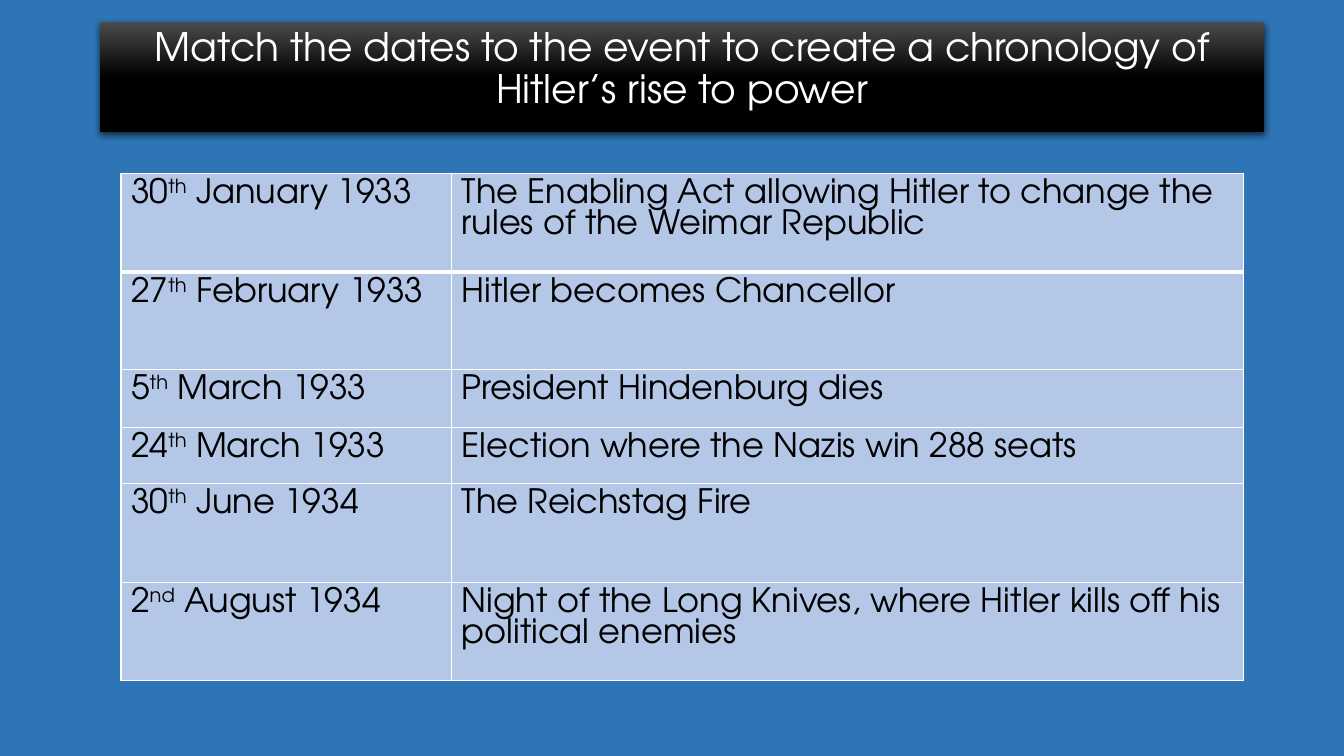
"""Build a slide for matching dates to events."""
from lxml import etree
from pptx import Presentation
from pptx.dml.color import RGBColor
from pptx.enum.text import MSO_ANCHOR, MSO_AUTO_SIZE, PP_ALIGN
from pptx.oxml.ns import qn
from pptx.util import Inches, Pt

TOP, NOFIT, CENTER = MSO_ANCHOR.TOP, MSO_AUTO_SIZE.NONE, PP_ALIGN.CENTER
FONT = "TeX Gyre Adventor"
BLUE, PALE, WHITE, BLACK, GREY = "2E75B6", "B4C7E7", "FFFFFF", "000000", "4B4B4B"

TITLE = "Match the dates to the event to create a chronology of Hitler’s rise to power"
ROWS = [
    (("30", "th", " January 1933"),
     "The Enabling Act allowing Hitler to change the rules of the Weimar Republic", 0.98),
    (("27", "th", " February 1933"), "Hitler becomes Chancellor", 0.97),
    (("5", "th", " March 1933"), "President Hindenburg dies", 0.57),
    (("24", "th", " March 1933"), "Election where the Nazis win 288 seats", 0.56),
    (("30", "th", " June 1934"), "The Reichstag Fire", 0.98),
    (("2", "nd", " August 1934"),
     "Night of the Long Knives, where Hitler kills off his political enemies", 0.97),
]
COLS = [3.28, 7.85]


def rgb(code):
    return RGBColor.from_string(code)


def node(parent, tag, **attrs):
    return etree.SubElement(parent, qn(tag), {k: str(v) for k, v in attrs.items()})


def style(para, size, color, space):
    para.font.name, para.font.size = FONT, Pt(size)
    para.font.color.rgb = rgb(color)
    para.line_spacing = space


def add_title(slide):
    bar = slide.shapes.title
    bar.left, bar.top, bar.width, bar.height = map(Inches, (0.99, 0.22, 11.55, 1.09))
    bar.fill.gradient()
    bar.fill.gradient_angle = 270
    for stop, (place, code) in zip(bar.fill.gradient_stops, [(0, GREY), (0.5, BLACK)]):
        stop.position, stop.color.rgb = place, rgb(code)
    bar.shadow.inherit = False
    glow = node(bar._element.spPr.find(qn("a:effectLst")), "a:outerShdw",
                blurRad=Pt(4.5), dist=Pt(1.5), dir=5400000, algn="ctr", rotWithShape=0)
    node(node(glow, "a:srgbClr", val=BLACK), "a:alpha", val=63000)
    frame = bar.text_frame
    frame.text = TITLE
    frame.word_wrap, frame.auto_size, frame.vertical_anchor = True, NOFIT, TOP
    para = frame.paragraphs[0]
    style(para, 28, WHITE, 0.9)
    para.alignment, para.space_before = CENTER, Pt(10)


def fill_cell(cell, parts, row):
    para = cell.text_frame.paragraphs[0]
    style(para, 24, BLACK, 1.0)
    for i, part in enumerate(parts):
        run = para.add_run()
        run.text = part
        if i == 1:
            run._r.get_or_add_rPr().set("baseline", "30000")
    props = cell._tc.get_or_add_tcPr()
    thick = {(0, "B"), (1, "T")}
    for side in "LRTB":
        line = node(props, "a:ln" + side, w=Pt(3 if (row, side) in thick else 1))
        node(node(line, "a:solidFill"), "a:srgbClr", val=WHITE)
    cell.fill.solid()
    cell.fill.fore_color.rgb = rgb(PALE)


def add_dates(slide):
    high = sum(row[2] for row in ROWS)
    table = slide.shapes.add_table(len(ROWS), len(COLS), Inches(1.2), Inches(1.72),
                                   Inches(sum(COLS)), Inches(high)).table
    table.first_row = table.horz_banding = False
    for col, width in zip(table.columns, COLS):
        col.width = Inches(width)
    for r, (date, event, height) in enumerate(ROWS):
        table.rows[r].height = Inches(height)
        fill_cell(table.cell(r, 0), date, r)
        fill_cell(table.cell(r, 1), [event], r)


def main():
    deck = Presentation()
    deck.slide_width, deck.slide_height = Inches(13.33), Inches(7.5)
    slide = deck.slides.add_slide(deck.slide_layouts[5])
    slide.background.fill.solid()
    slide.background.fill.fore_color.rgb = rgb(BLUE)
    add_title(slide)
    add_dates(slide)
    deck.save("out.pptx")


if __name__ == "__main__":
    main()
